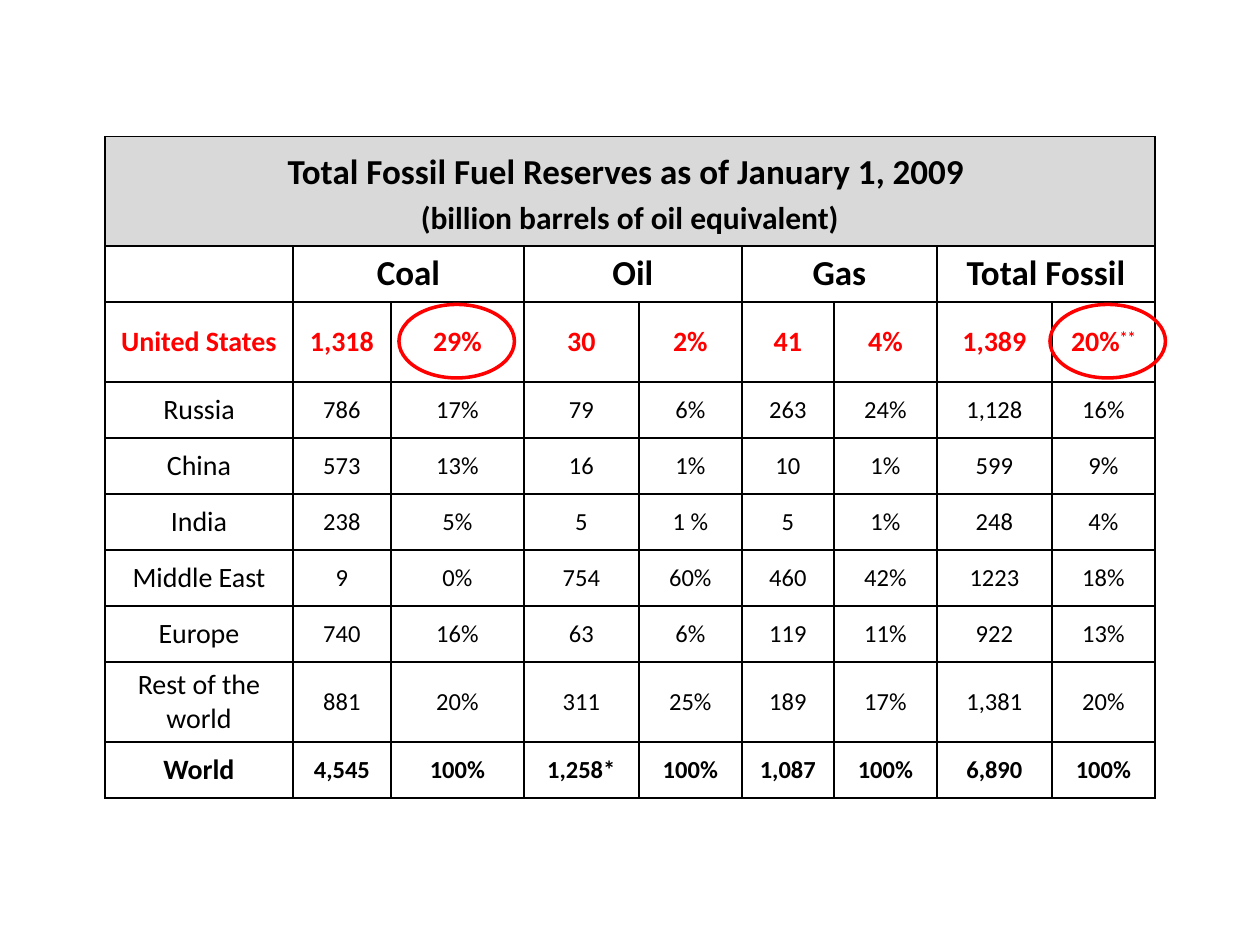
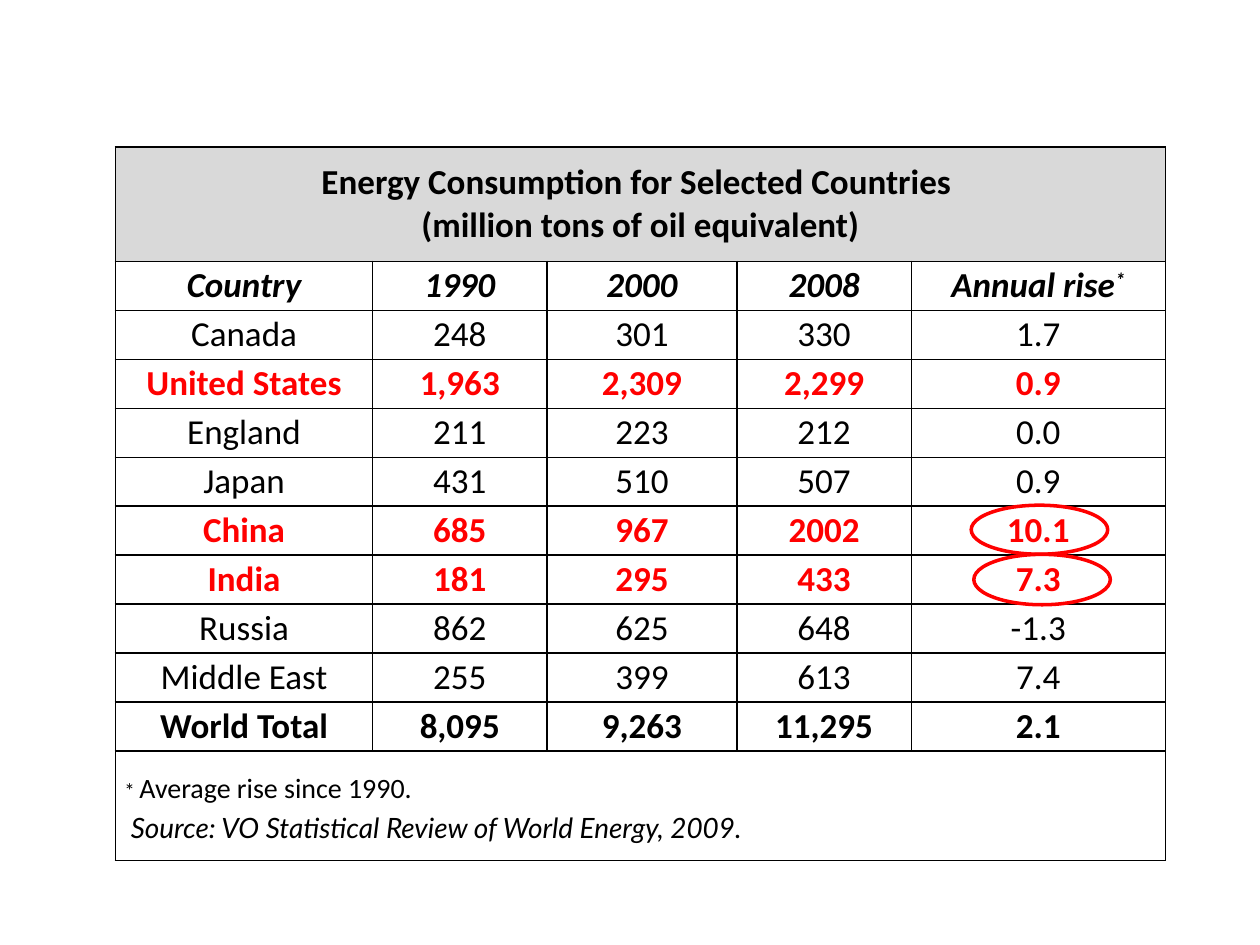
from copy import deepcopy
from dataclasses import dataclass

from lxml.etree import SubElement
from pptx import Presentation
from pptx.dml.color import RGBColor as Color
from pptx.enum.shapes import MSO_SHAPE as Shape
from pptx.enum.text import MSO_ANCHOR as Anchor, PP_ALIGN as Align
from pptx.oxml.ns import qn
from pptx.util import Pt


@dataclass(frozen=True)
class Theme:
    font: str = "Calibri"
    source_font: str = "Lato"
    ink: str = "000000"
    accent: str = "FF0000"
    band: str = "D9D9D9"
    large: int = 20
    medium: int = 18
    label: int = 16
    value: int = 14
    mark: int = 12
    rule: int = 1
    ring: int = 2
    inset: float = 5.04


THEME = Theme()
TITLE = {"size": THEME.large, "bold": True}
UNIT = {"size": THEME.medium, "bold": True}
HEADING = {"size": THEME.large, "bold": True, "italic": True}
LARGE = {"size": THEME.large}
LARGE_TOTAL = {**LARGE, "bold": True}
LARGE_ACCENT = {**LARGE_TOTAL, "color": THEME.accent}
LABEL = {"size": THEME.label}
VALUE = {"size": THEME.value}
LABEL_TOTAL = {**LABEL, "bold": True}
VALUE_TOTAL = {**VALUE, "bold": True}
LABEL_ACCENT = {**LABEL_TOTAL, "color": THEME.accent}
SOURCE = {**LABEL, "name": THEME.source_font, "italic": True}

RESERVES = {
    "at": (60, 78),
    "columns": [107.4, 56, 76, 65.7, 58.9, 52.6, 58.9, 65.7, 58.9],
    "rows": [62.6, 32, 45.8, 32, 32, 32, 32, 32, 45.8, 32],
    "title": [
        [("Total Fossil Fuel Reserves as of January 1, 2009 ", TITLE)],
        [("(billion barrels of oil equivalent)", UNIT)],
    ],
    "title_spacing": 1.15,
    "groups": ["Coal", "Oil", "Gas", "Total Fossil"],
    "body": [
        (LABEL_ACCENT, LABEL_ACCENT,
         ["United States", "1,318", "29%", "30", "2%", "41", "4%", "1,389", "20%^**"]),
        (LABEL, VALUE, ["Russia", "786", "17%", "79", "6%", "263", "24%", "1,128", "16%"]),
        (LABEL, VALUE, ["China", "573", "13%", "16", "1%", "10", "1%", "599", "9%"]),
        (LABEL, VALUE, ["India", "238", "5%", "5", "1 %", "5", "1%", "248", "4%"]),
        (LABEL, VALUE, ["Middle East", "9", "0%", "754", "60%", "460", "42%", "1223", "18%"]),
        (LABEL, VALUE, ["Europe", "740", "16%", "63", "6%", "119", "11%", "922", "13%"]),
        (LABEL, VALUE,
         ["Rest of the world", "881", "20%", "311", "25%", "189", "17%", "1,381", "20%"]),
        (LABEL_TOTAL, VALUE_TOTAL,
         ["World", "4,545", "100%", "1,258*", "100%", "1,087", "100%", "6,890", "100%"]),
    ],
    "rings": [(228, 174, 66, 42), (600, 174, 66, 42)],
}

CONSUMPTION = {
    "at": (66, 84),
    "columns": [147, 99.6, 108.6, 99.6, 145.2],
    "rows": [65.4] + [28] * 10 + [62.6],
    "title": [
        [("Energy Consumption for Selected Countries ", TITLE)],
        [("(million tons of oil equivalent)", TITLE)],
    ],
    "title_spacing": 1.0,
    "groups": [],
    "body": [
        (HEADING, HEADING, ["Country", "1990", "2000", "2008", "Annual rise^*"]),
        (LARGE, LARGE, ["Canada", "248", "301", "330", "1.7"]),
        (LARGE_ACCENT, LARGE_ACCENT, ["United States", "1,963", "2,309", "2,299", "0.9"]),
        (LARGE, LARGE, ["England", "211", "223", "212", "0.0"]),
        (LARGE, LARGE, ["Japan", "431", "510", "507", "0.9"]),
        (LARGE_ACCENT, LARGE_ACCENT, ["China", "685", "967", "2002", "10.1"]),
        (LARGE_ACCENT, LARGE_ACCENT, ["India", "181", "295", "433", "7.3"]),
        (LARGE, LARGE, ["Russia", "862", "625", "648", "-1.3"]),
        (LARGE, LARGE, ["Middle East", "255", "399", "613", "7.4"]),
        (LARGE_TOTAL, LARGE_TOTAL, ["World Total", "8,095", "9,263", "11,295", "2.1"]),
    ],
    "footnote": [
        ("* ", {"size": THEME.mark}),
        ("Average rise since 1990.", LABEL),
        ("\n", LABEL),
        (" Source: VO Statistical Review of World Energy, 2009.", SOURCE),
    ],
    "rings": [(555, 288.7, 78, 28), (556.5, 316.8, 78, 28.8)],
}


def set_all(target, values):
    for name, value in values.items():
        setattr(target, name, value)


def add_span(para, text, style):
    if text == "\n":
        last = para.runs[-1]
        para.add_line_break()
        para._p[-1].append(deepcopy(last._r.rPr))
        return
    main, _, raised = text.partition("^")
    for part, baseline in ((main, None), (raised, "30000")):
        if part:
            span = para.add_run()
            span.text = part
            look = {"name": THEME.font, "bold": False, "italic": False,
                    "color": THEME.ink, **style}
            span.font.color.rgb = Color.from_string(look.pop("color"))
            look["size"] = Pt(look["size"])
            set_all(span.font, look)
            if baseline:
                span._r.rPr.set("baseline", baseline)


def write(cell, paragraphs, **layout):
    for index, spans in enumerate(paragraphs):
        frame = cell.text_frame
        para = frame.add_paragraph() if index else frame.paragraphs[0]
        set_all(para, {"alignment": Align.CENTER, **layout})
        for text, style in spans:
            add_span(para, text, style)


def dress(cell):
    set_all(cell, {
        "margin_left": Pt(THEME.inset), "margin_right": Pt(THEME.inset),
        "margin_top": 0, "margin_bottom": 0, "vertical_anchor": Anchor.MIDDLE,
    })
    properties = cell._tc.get_or_add_tcPr()
    for side in ("lnL", "lnR", "lnT", "lnB"):
        line = SubElement(properties, qn(f"a:{side}"), w=str(Pt(THEME.rule)))
        fill = SubElement(line, qn("a:solidFill"))
        SubElement(fill, qn("a:srgbClr"), val=THEME.ink)
    cell.fill.background()


def add_grid(page, content):
    columns, rows = content["columns"], content["rows"]
    box = page.shapes.add_table(
        len(rows), len(columns), *map(Pt, content["at"]), Pt(sum(columns)), Pt(sum(rows)))
    table = box.table
    set_all(table, {"first_row": False, "horz_banding": False})
    for column, width in zip(table.columns, columns):
        column.width = Pt(width)
    for row, height in zip(table.rows, rows):
        row.height = Pt(height)
    for cell in table.iter_cells():
        dress(cell)
    return table


def add_ring(page, place):
    ring = page.shapes.add_shape(Shape.OVAL, *map(Pt, place))
    ring.shadow.inherit = False
    ring.fill.background()
    ring.line.color.rgb = Color.from_string(THEME.accent)
    ring.line.width = Pt(THEME.ring)


def build_page(deck, content):
    page = deck.slides.add_slide(deck.slide_layouts[6])
    table = add_grid(page, content)
    last_column = len(content["columns"]) - 1
    last_row = len(content["rows"]) - 1

    title = table.cell(0, 0)
    title.merge(table.cell(0, last_column))
    title.fill.solid()
    title.fill.fore_color.rgb = Color.from_string(THEME.band)
    write(title, content["title"], line_spacing=content["title_spacing"])

    for index, group in enumerate(content["groups"]):
        left = 1 + 2 * index
        heading = table.cell(1, left)
        heading.merge(table.cell(1, left + 1))
        write(heading, [[(group, TITLE)]])

    first_body_row = 2 if content["groups"] else 1
    for row, (label, value, texts) in enumerate(content["body"], first_body_row):
        for column, text in enumerate(texts):
            write(table.cell(row, column), [[(text, value if column else label)]])

    if "footnote" in content:
        footer = table.cell(last_row, 0)
        footer.merge(table.cell(last_row, last_column))
        write(footer, [content["footnote"]],
              alignment=Align.LEFT, line_spacing=1.15, space_after=Pt(10))

    for place in content["rings"]:
        add_ring(page, place)


def main():
    deck = Presentation()
    set_all(deck, {"slide_width": Pt(720), "slide_height": Pt(540)})
    for content in (RESERVES, CONSUMPTION):
        build_page(deck, content)
    deck.save("out.pptx")


if __name__ == "__main__":
    main()
